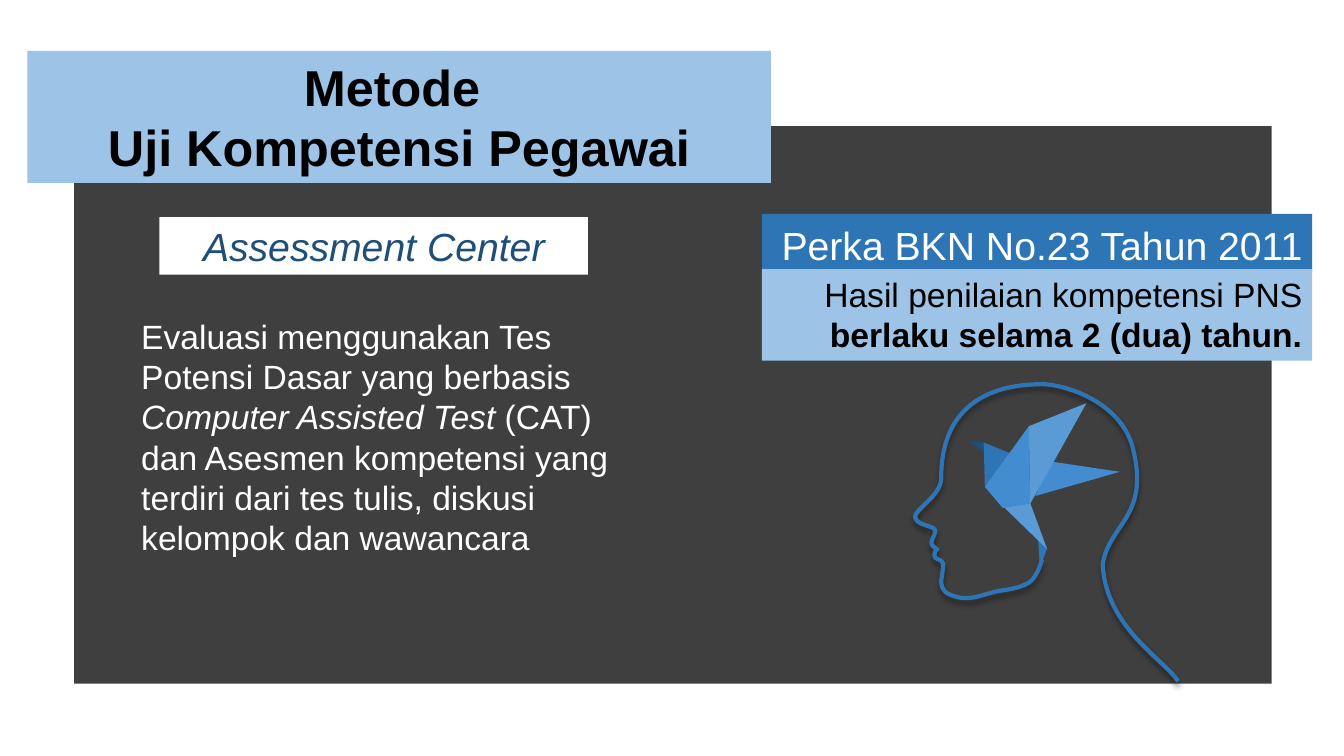
"""Build the slide on the employee competency assessment method."""
from dataclasses import dataclass

from lxml import etree
from pptx import Presentation
from pptx import util as u
from pptx.dml.color import RGBColor
from pptx.enum import shapes, text
from pptx.oxml.ns import qn

Point = tuple[float, float]

DARK, MID, SKY, PALE = "1F4E79", "2E75B6", "5B9BD5", "9DC3E6"
WING, PANEL, WHITE, BLACK = "438CCF", "3F3F3F", "FFFFFF", "000000"
LEFT, CENTER, RIGHT = text.PP_ALIGN.LEFT, text.PP_ALIGN.CENTER, text.PP_ALIGN.RIGHT
TOP, MIDDLE = text.MSO_ANCHOR.TOP, text.MSO_ANCHOR.MIDDLE


@dataclass
class Span:
    words: str
    bold: bool = False
    italic: bool = False


@dataclass
class Label:
    place: tuple[float, float, float, float]
    paras: list[list[Span]]
    size: int
    colour: str
    fill: str | None = None
    align: text.PP_ALIGN = LEFT
    anchor: text.MSO_ANCHOR = TOP
    spacing: float = 1.0
    before: float = 0


@dataclass
class Facet:
    points: list[Point]
    fill: str


TITLE = Label(
    (0.69, 1.28, 18.74, 3.33),
    [[Span("Metode ", bold=True)], [Span("Uji Kompetensi Pegawai", bold=True)]],
    36, BLACK, PALE, CENTER)
EVALUATION = Label(
    (3.31, 7.83, 13.08, 6.4),
    [[Span("Evaluasi menggunakan Tes Potensi Dasar yang berbasis "),
      Span("Computer Assisted Test ", italic=True),
      Span("(CAT) dan Asesmen kompetensi yang terdiri dari tes tulis, "
           "diskusi kelompok dan wawancara")]],
    24, WHITE)
CENTER_NAME = Label(
    (4.02, 5.47, 10.8, 1.45), [[Span("Assessment Center", italic=True)]],
    28, DARK, WHITE, CENTER)
REGULATION = [
    Label((19.2, 5.39, 13.87, 1.45), [[Span("Perka BKN No.23 Tahun 2011")]],
          28, WHITE, MID, RIGHT, MIDDLE, 1.1, 5.6),
    Label((19.2, 6.78, 13.87, 2.31),
          [[Span("Hasil penilaian kompetensi PNS "),
            Span("berlaku selama 2 (dua) tahun.", bold=True)]],
          24, BLACK, PALE, RIGHT),
]

HEAD_START = (26.26, 14.1)
HEAD_CURVES = [
    ((26.26, 14.1), (26.16, 14.5), (25.96, 14.66)),
    ((25.78, 14.78), (25.58, 14.83), (25.25, 14.88)),
    ((24.77, 14.94), (24.41, 15.24), (23.85, 14.94)),
    ((23.62, 14.73), (23.77, 14.53), (23.77, 14.2)),
    ((23.72, 14.05), (23.55, 14.15), (23.55, 13.97)),
    ((23.55, 13.89), (23.57, 13.89), (23.62, 13.84)),
    ((23.57, 13.79), (23.5, 13.79), (23.47, 13.69)),
    ((23.47, 13.59), (23.57, 13.49), (23.57, 13.36)),
    ((23.52, 13.23), (23.11, 13.26), (23.06, 13.03)),
    ((23.06, 12.83), (23.7, 12.5), (23.72, 12.07)),
    ((23.7, 9.68), (25.78, 9.7), (26.24, 9.68)),
    ((26.77, 9.68), (28.14, 10.06), (28.52, 11.18)),
    ((29.03, 13.03), (27.96, 13.16), (27.79, 14.22)),
    ((27.86, 15.82), (29.39, 16.66), (29.69, 17.17)),
]
BIRD = [
    Facet([(26.16, 13.56), (26.21, 14.3), (26.39, 13.82)], MID),
    Facet([(26.39, 13.84), (25.96, 12.67), (25.3, 12.78)], SKY),
    Facet([(24.82, 11.15), (24.41, 11.13), (24.82, 11.4)], DARK),
    Facet([(25.48, 11.43), (24.79, 11.15), (24.82, 12.27)], MID),
    Facet([(28.22, 11.89), (26.49, 11.63), (26.09, 12.5)], WING),
    Facet([(25.27, 12.8), (24.82, 12.27), (25.93, 10.74), (25.96, 12.7)], WING),
    Facet([(25.93, 10.74), (27.38, 10.16), (25.96, 12.7)], SKY),
]


def rgb(colour: str) -> RGBColor:
    return RGBColor.from_string(colour)


def paint(shape, colour: str) -> None:
    shape.fill.solid()
    shape.fill.fore_color.rgb = rgb(colour)
    shape.line.fill.background()


def write(shape, label: Label) -> None:
    frame = shape.text_frame
    frame.text = "\n".join("" for _ in label.paras)
    frame.word_wrap = True
    frame.auto_size = text.MSO_AUTO_SIZE.NONE
    frame.vertical_anchor = label.anchor
    for para, spans in zip(frame.paragraphs, label.paras):
        para.alignment = label.align
        para.line_spacing = label.spacing
        para.space_before = u.Pt(label.before)
        for span in spans:
            run = para.add_run()
            run.text = span.words
            font = run.font
            font.name, font.size = "Arial", u.Pt(label.size)
            font.bold, font.italic = span.bold, span.italic
            font.color.rgb = rgb(label.colour)


def add_rectangle(group, place: tuple[float, float, float, float], fill: str):
    box = group.add_shape(shapes.MSO_SHAPE.RECTANGLE, *map(u.Cm, place))
    box.shadow.inherit = False
    paint(box, fill)
    return box


def add_label(group, label: Label) -> None:
    if label.fill:
        box = add_rectangle(group, label.place, label.fill)
    else:
        box = group.add_textbox(*map(u.Cm, label.place))
    write(box, label)


def add_outline(group, points: list[Point], close: bool):
    corners = [(u.Cm(x), u.Cm(y)) for x, y in points]
    builder = group.build_freeform(*corners[0])
    builder.add_line_segments(corners[1:], close=close)
    outline = builder.convert_to_shape()
    outline.shadow.inherit = False
    return outline


def add_head(group) -> None:
    ends = [HEAD_START] + [curve[-1] for curve in HEAD_CURVES]
    head = add_outline(group, ends, close=False)
    segments = list(head.element.iter(qn("a:lnTo")))
    for segment, curve in zip(segments, HEAD_CURVES):
        bend = etree.Element(qn("a:cubicBezTo"))
        for x, y in curve:
            etree.SubElement(bend, qn("a:pt"), x=str(u.Cm(x) - head.left),
                             y=str(u.Cm(y) - head.top))
        segment.getparent().replace(segment, bend)
    head.fill.background()
    head.line.color.rgb = rgb(MID)
    head.line.width = u.Pt(3)
    effects = head.element.spPr.find(qn("a:effectLst"))
    shadow = etree.SubElement(
        effects, qn("a:outerShdw"), blurRad=str(u.Pt(4)), dist=str(u.Pt(3)),
        dir="5400000", rotWithShape="0")
    tint = etree.SubElement(shadow, qn("a:srgbClr"), val=BLACK)
    etree.SubElement(tint, qn("a:alpha"), val="40000")


def main() -> None:
    deck = Presentation()
    deck.slide_width, deck.slide_height = u.Cm(33.87), u.Cm(19.05)
    page = deck.slides.add_slide(deck.slide_layouts[5])

    title = page.shapes.title
    title.left, title.top, title.width, title.height = map(u.Cm, TITLE.place)
    paint(title, TITLE.fill)
    write(title, TITLE)
    panel = add_rectangle(page.shapes, (1.87, 3.18, 30.18, 14.05), PANEL)
    title.element.addprevious(panel.element)

    add_label(page.shapes, EVALUATION)
    add_label(page.shapes, CENTER_NAME)
    regulation = page.shapes.add_group_shape().shapes
    for label in REGULATION:
        add_label(regulation, label)

    illustration = page.shapes.add_group_shape().shapes
    add_head(illustration)
    for facet in BIRD:
        paint(add_outline(illustration, facet.points, close=True), facet.fill)
    deck.save("out.pptx")


if __name__ == "__main__":
    main()
